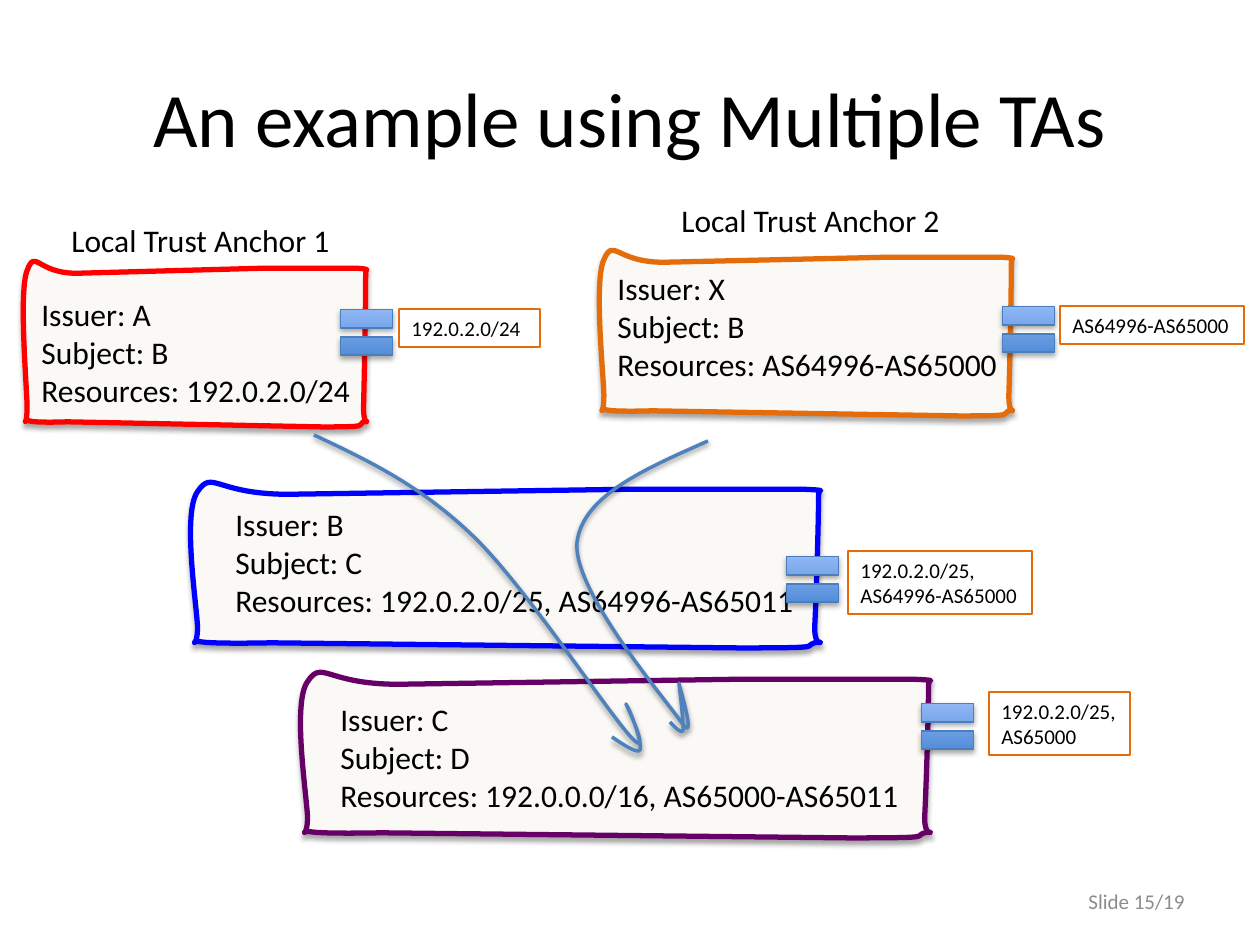
from lxml import etree
from pptx import Presentation
from pptx.dml.color import RGBColor
from pptx.enum.shapes import MSO_SHAPE
from pptx.enum.text import MSO_ANCHOR, MSO_AUTO_SIZE, PP_ALIGN
from pptx.oxml.ns import qn
from pptx.util import Emu, Pt

RECT, EQUAL = MSO_SHAPE.RECTANGLE, MSO_SHAPE.MATH_EQUAL
TOP, MIDDLE = MSO_ANCHOR.TOP, MSO_ANCHOR.MIDDLE
LEFT, CENTER, RIGHT = PP_ALIGN.LEFT, PP_ALIGN.CENTER, PP_ALIGN.RIGHT
GROW, FIXED = MSO_AUTO_SIZE.SHAPE_TO_FIT_TEXT, MSO_AUTO_SIZE.NONE
PX = 914400 / 126

COLORS = {
    "text": "000000", "foot": "8C8C8C", "paper": "FAF9F6",
    "red": "FF0000", "orange": "E46C0A", "blue": "0000FF", "purple": "660066",
    "dark": "3F80CE", "light": "A4C4FF", "edge": "4B7EBC", "arrow": "4F81BD",
}

# Paper outline in thousandths of its box: a start, then cubic segments
PAPER = [
    (12, 53),
    (-12, 183), (10, 718), (12, 870),
    (12, 1023), (-2, 947), (16, 962),
    (36, 977), (128, 969), (128, 969),
    (128, 969), (870, 1000), (870, 1000),
    (1014, 1000), (970, 992), (990, 969),
    (1012, 947), (990, 1023), (990, 878),
    (992, 740), (996, 260), (996, 122),
    (996, -15), (1000, 76), (996, 61),
    (992, 46), (1018, 46), (970, 38),
    (920, 38), (703, 38), (703, 38),
    (703, 38), (156, 69), (156, 69),
    (40, 69), (36, -84), (12, 53),
]

# Hand-drawn arrows in px, same scheme
ARROWS = [
    [(314, 435), (367, 460), (420, 485), (473, 536),
     (525, 586), (604, 707), (630, 736), (655, 764), (625, 702), (626, 704),
     (629, 707), (643, 743), (640, 750), (638, 754), (625, 746), (612, 737)],
    [(708, 441), (645, 469), (582, 496), (577, 543),
     (573, 591), (665, 699), (682, 723), (698, 746), (678, 682), (679, 683),
     (679, 684), (684, 723), (683, 730), (682, 736), (670, 722), (670, 722)],
]

# Colour, paper box, text box, text, equal sign corner, tag box, tag text
CERTS = [
    ("purple", (300, 673, 631, 165), (328, 694, 591, 127),
     "Issuer: C\nSubject: D\nResources: 192.0.0.0/16, AS65000-AS65011",
     (912, 688), (989, 692, 141, 63), "192.0.2.0/25,\nAS65000"),
    ("blue", (190, 483, 631, 165), (223, 499, 591, 127),
     "Issuer: B\nSubject: C\nResources: 192.0.2.0/25, AS64996-AS65011",
     (777, 541), (848, 551, 184, 63), "192.0.2.0/25,\nAS64996-AS65000"),
    ("red", (23, 262, 344, 165), (29, 289, 339, 127),
     "Issuer: A\nSubject: B\nResources: 192.0.2.0/24",
     (331, 294), (399, 309, 141, 38), "192.0.2.0/24"),
    ("orange", (599, 251, 414, 165), (605, 263, 459, 127),
     "Issuer: X\nSubject: B\nResources: AS64996-AS65000",
     (993, 291), (1060, 306, 184, 38), "AS64996-AS65000"),
]

LABELS = [
    ("Local Trust Anchor 1", (59, 215, 289, 50)),
    ("Local Trust Anchor 2", (669, 195, 289, 50)),
]


def px(n):
    return Emu(round(n * PX))


def rgb(name):
    return RGBColor.from_string(COLORS[name])


def stroke(shape, color, width):
    shape.line.color.rgb = rgb(color)
    shape.line.width = Pt(width)


def shade(shape, alpha):
    """Give the shape a soft shadow straight below it."""
    shape.shadow.inherit = False
    effects = shape._element.spPr.find(qn("a:effectLst"))
    outer = etree.SubElement(effects, qn("a:outerShdw"), blurRad="39370",
                             dist="22860", dir="5400000", rotWithShape="0")
    color = etree.SubElement(outer, qn("a:srgbClr"), val=COLORS["text"])
    etree.SubElement(color, qn("a:alpha"), val=str(alpha * 1000))


def write(shape, text, size, color="text", align=LEFT, **frame):
    """Fill the text frame; extra keywords are frame settings."""
    body = shape.text_frame
    body.text = text
    look = {"vertical_anchor": TOP, "word_wrap": False, "auto_size": GROW}
    for key, value in {**look, **frame}.items():
        setattr(body, key, value)
    for para in body.paragraphs:
        para.alignment = align
        for run in para.runs:
            for key, value in {"name": "Calibri", "size": Pt(size)}.items():
                setattr(run.font, key, value)
            run.font.color.rgb = rgb(color)


def add_text(slide, box, text, size, **form):
    write(slide.shapes.add_textbox(*map(px, box)), text, size, **form)


def add_curve(slide, points, close=False):
    """Draw cubic segments: each three points after the start are one."""
    start, *rest = [(px(x), px(y)) for x, y in points]
    pen = slide.shapes.build_freeform(*start, scale=1.0)
    pen.add_line_segments(rest, close=close)
    shape = pen.convert_to_shape()
    lines = list(shape._element.iter(qn("a:lnTo")))
    for i in range(0, len(rest), 3):
        curve = etree.Element(qn("a:cubicBezTo"))
        lines[i].addprevious(curve)
        for line in lines[i:i + 3]:
            curve.append(line[0])
            line.getparent().remove(line)
    return shape


def add_paper(slide, box, color):
    left, top, width, height = box
    points = [(left + x * width / 1000, top + y * height / 1000)
              for x, y in PAPER]
    shape = add_curve(slide, points, close=True)
    shape.fill.solid()
    shape.fill.fore_color.rgb = rgb("paper")
    stroke(shape, color, 3)
    shade(shape, 35)


def add_equal(slide, corner):
    shape = slide.shapes.add_shape(EQUAL, *map(px, (*corner, 71, 77)))
    shape.fill.gradient()
    shape.fill.gradient_angle = 90
    for stop, name, spot in zip(shape.fill.gradient_stops,
                                ("dark", "light"), (0, 1)):
        stop.color.rgb = rgb(name)
        stop.position = spot
    stroke(shape, "edge", 0.75)
    shade(shape, 35)


def add_tag(slide, box, text):
    shape = slide.shapes.add_shape(RECT, *map(px, box))
    shape.fill.background()
    stroke(shape, "orange", 0.75)
    shape.shadow.inherit = False
    write(shape, text, 12)


def add_arrow(slide, points):
    shape = add_curve(slide, points)
    shape.fill.background()
    stroke(shape, "arrow", 2)
    shade(shape, 38)


def main():
    deck = Presentation()
    deck.slide_width, deck.slide_height = px(1260), px(945)
    slide = deck.slides.add_slide(deck.slide_layouts[5])

    # Title
    title = slide.shapes.title
    spots = {"left": 63, "top": 38, "width": 1134, "height": 157}
    for key, value in spots.items():
        setattr(title, key, px(value))
    write(title, "An example using Multiple TAs", 44, align=CENTER,
          vertical_anchor=MIDDLE, word_wrap=True, auto_size=FIXED)

    # Certificates with their resource tags
    for color, paper, box, text, corner, tag, note in CERTS:
        add_paper(slide, paper, color)
        add_text(slide, box, text, 18)
        add_equal(slide, corner)
        add_tag(slide, tag, note)
    for text, box in LABELS:
        add_text(slide, box, text, 18)

    # Arrows from the trust anchors
    for points in ARROWS:
        add_arrow(slide, points)

    # Slide number
    add_text(slide, (903, 876, 294, 50), "Slide 15/19", 12, color="foot",
             align=RIGHT, vertical_anchor=MIDDLE, word_wrap=True,
             auto_size=FIXED)
    deck.save("out.pptx")


if __name__ == "__main__":
    main()
